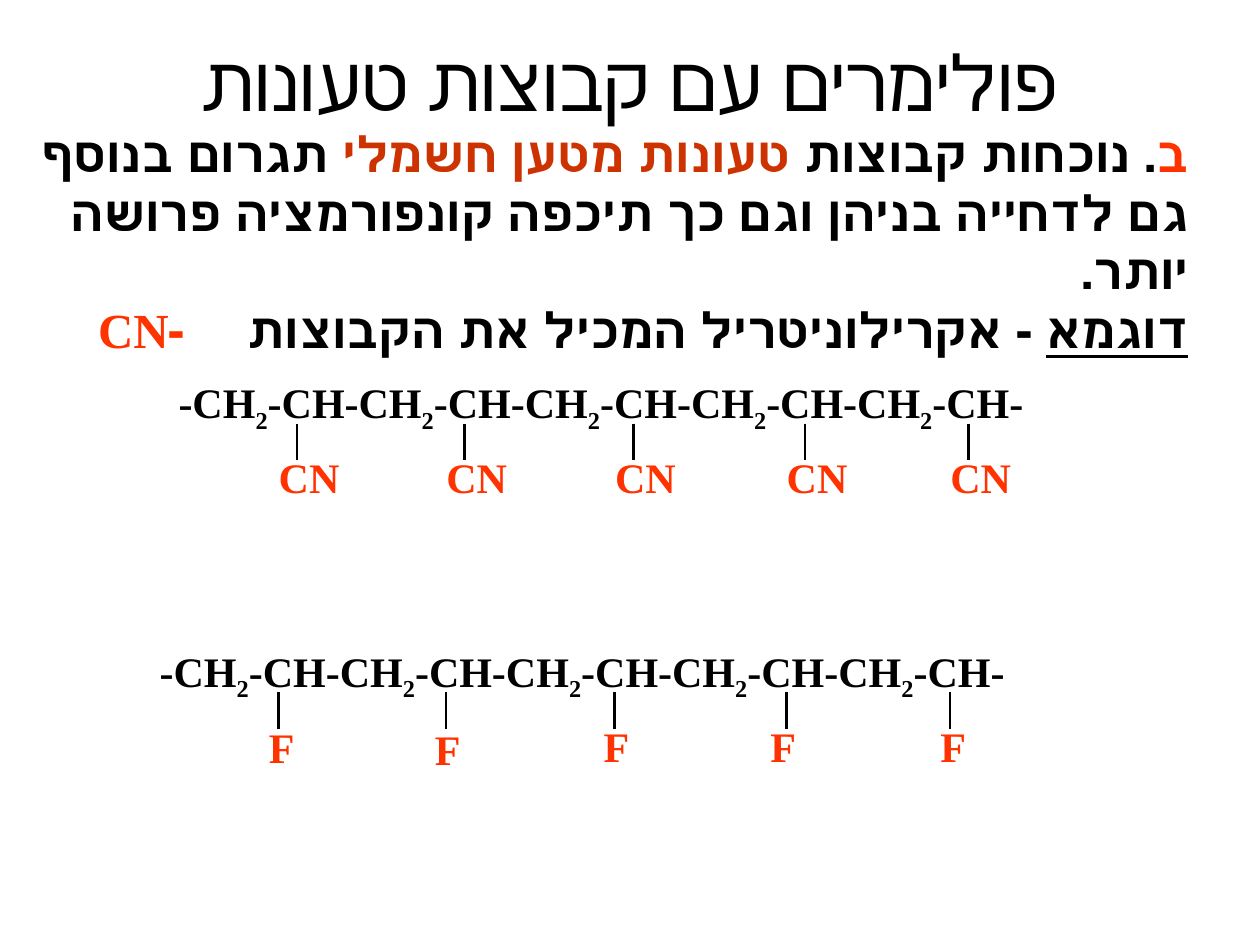
"""Build a slide on polymers that carry charged side groups."""
from dataclasses import dataclass

from lxml import etree
from pptx import Presentation
from pptx.dml.color import RGBColor
from pptx.enum.shapes import MSO_CONNECTOR
from pptx.enum.text import MSO_ANCHOR, MSO_AUTO_SIZE, PP_ALIGN
from pptx.oxml.ns import qn
from pptx.util import Cm, Pt

STRAIGHT = MSO_CONNECTOR.STRAIGHT
BOTTOM = MSO_ANCHOR.BOTTOM
FIT, NO_FIT = MSO_AUTO_SIZE.SHAPE_TO_FIT_TEXT, MSO_AUTO_SIZE.NONE
CENTER, RIGHT, LEFT = PP_ALIGN.CENTER, PP_ALIGN.RIGHT, PP_ALIGN.LEFT


@dataclass(frozen=True)
class Theme:
    font: str = "Times New Roman"
    ink: RGBColor = RGBColor(0x00, 0x00, 0x00)
    accent: RGBColor = RGBColor(0xFF, 0x33, 0x00)
    charge: RGBColor = RGBColor(0xCC, 0x33, 0x00)
    title: Pt = Pt(44)
    body: Pt = Pt(28)
    formula: Pt = Pt(24)
    bond: Pt = Pt(1.5)


THEME = Theme()
BODY = {"size": THEME.body, "bold": True}
FORMULA = {"size": THEME.formula, "bold": True}
UNITS = 5
BOND_X = (2.64, 6.02, 9.42, 12.88, 16.18)
BOND_TOP, BOND_LENGTH = 1.07, 0.74
CN_LABELS = [(x - 1.04, 1.5) for x in BOND_X]
F_LABELS = [(1.78, 1.55), (5.13, 1.58), (8.53, 1.52), (11.89, 1.52), (15.32, 1.52)]


def set_attrs(obj, values):
    """Set each named attribute on the object."""
    for name, value in values.items():
        setattr(obj, name, value)


def add_run(p, text, fmt, color=THEME.ink, **xml_attrs):
    """Append a formatted run, with optional raw run attributes."""
    r = p.add_run()
    r.text = text
    set_attrs(r.font, {"name": THEME.font, **fmt})
    r.font.color.rgb = color
    for name, value in xml_attrs.items():
        r.font._element.set(name, value)


def set_rtl(p, align):
    """Make the paragraph run right to left."""
    p.alignment = align
    p._p.get_or_add_pPr().set("rtl", "1")


def add_text(shapes, left, top, width, height, **frame):
    """Add a text box and return its first paragraph."""
    tf = shapes.add_textbox(Cm(left), Cm(top), Cm(width), Cm(height)).text_frame
    set_attrs(tf, {"word_wrap": True, "auto_size": FIT, **frame})
    return tf.paragraphs[0]


def add_title(s, text):
    """Place and fill the title placeholder."""
    sp = s.shapes.title
    set_attrs(sp, {"left": Cm(1.9), "top": Cm(0), "width": Cm(21.59), "height": Cm(2.69)})
    tf = sp.text_frame
    set_attrs(tf, {"vertical_anchor": BOTTOM, "word_wrap": True, "auto_size": NO_FIT})
    p = tf.paragraphs[0]
    set_rtl(p, CENTER)
    add_run(p, text, {"size": THEME.title})


def add_explanation(s):
    """Add the right-to-left explanation and its example."""
    p = add_text(s.shapes, 0.28, 2.36, 23.93, 3.81)
    set_rtl(p, RIGHT)
    add_run(p, "ב", BODY, THEME.accent)
    add_run(p, ". נוכחות קבוצות ", BODY)
    add_run(p, "טעונות מטען חשמלי", BODY, THEME.charge)
    add_run(p, " תגרום בנוסף גם לדחייה בניהן וגם כך תיכפה קונפורמציה פרושה יותר.", BODY)
    p.add_line_break()
    add_run(p, "דוגמא", {**BODY, "underline": True})
    add_run(p, " - אקרילוניטריל המכיל את הקבוצות", BODY)
    add_run(p, " ", BODY, spc="2800")
    add_run(p, "-CN", BODY, THEME.accent)


def add_bond(shapes, x, top):
    """Add a vertical bond line without a shadow."""
    line = shapes.add_connector(STRAIGHT, Cm(x), Cm(top), Cm(x), Cm(top + BOND_LENGTH))
    line.line.color.rgb = THEME.ink
    line.line.width = THEME.bond
    etree.SubElement(line._element.spPr, qn("a:effectLst"))


def add_polymer(s, left, top, group, labels, label_width):
    """Add a carbon chain with one side group on each unit."""
    shapes = s.shapes.add_group_shape().shapes
    p = add_text(shapes, left, top, 20.68, 1.27)
    p.alignment = LEFT
    for i in range(UNITS):
        add_run(p, "-CH-CH" if i else "-CH", FORMULA)
        add_run(p, "2", FORMULA, baseline="-25000")
    add_run(p, "-CH-", FORMULA)
    for x, (dx, dy) in zip(BOND_X, labels):
        add_bond(shapes, left + x, top + BOND_TOP)
        p = add_text(shapes, left + dx, top + dy, label_width, 1.27,
                     word_wrap=False, margin_left=Cm(0.67))
        p.alignment = LEFT
        add_run(p, group, FORMULA, THEME.accent)


def main():
    """Build and save the slide."""
    prs = Presentation()
    set_attrs(prs, {"slide_width": Cm(25.4), "slide_height": Cm(19.05)})
    s = prs.slides.add_slide(prs.slide_layouts[5])
    add_explanation(s)
    add_title(s, "פולימרים עם קבוצות טעונות")
    add_polymer(s, 3.35, 7.47, "CN", CN_LABELS, 2.16)
    add_polymer(s, 2.97, 12.88, "F", F_LABELS, 1.45)
    prs.save("out.pptx")


if __name__ == "__main__":
    main()
